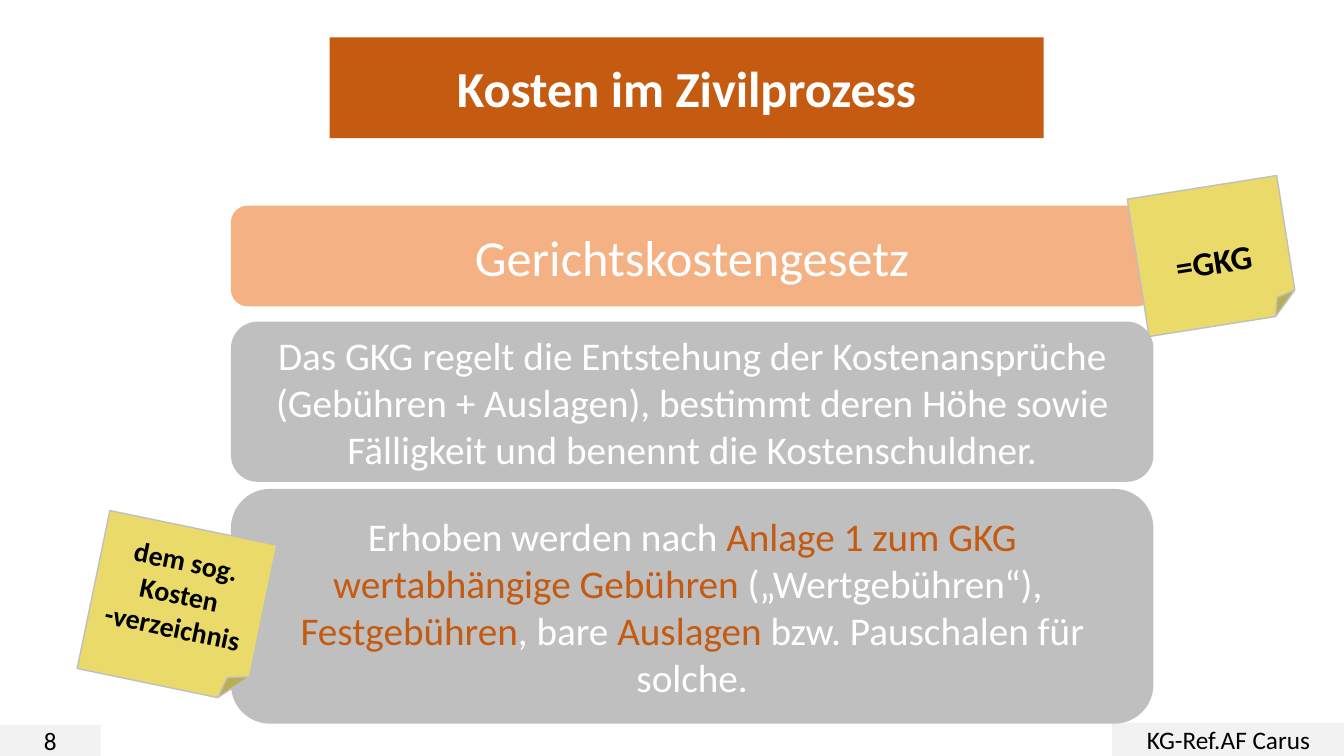
from lxml import etree
from pptx import Presentation
from pptx.dml.color import RGBColor
from pptx.enum.shapes import MSO_SHAPE
from pptx.enum.text import MSO_ANCHOR, MSO_AUTO_SIZE, PP_ALIGN
from pptx.oxml.ns import qn
from pptx.util import Inches, Pt

ROUNDED = MSO_SHAPE.ROUNDED_RECTANGLE
RECTANGLE = MSO_SHAPE.RECTANGLE
NOTE = MSO_SHAPE.FOLDED_CORNER
CENTER = PP_ALIGN.CENTER
MIDDLE = MSO_ANCHOR.MIDDLE
NO_AUTOFIT = MSO_AUTO_SIZE.NONE
TITLE_ONLY = 5

FONT = "Calibri"
COLORS = {
    "rust": "C55A11",
    "peach": "F4B183",
    "gray": "BFBFBF",
    "light": "F2F2F2",
    "yellow": "E9DA69",
    "white": "FFFFFF",
    "black": "000000",
}
PANEL_LEFT, PANEL_WIDTH = 2.29, 9.15


def color(name):
    return RGBColor.from_string(COLORS[name])


def write_text(shape, paragraphs, size, bold=False):
    """Each paragraph is a list of (text, color name) pairs."""
    frame = shape.text_frame
    frame.word_wrap = True
    frame.auto_size = NO_AUTOFIT
    frame.vertical_anchor = MIDDLE
    for index, runs in enumerate(paragraphs):
        paragraph = frame.add_paragraph() if index else frame.paragraphs[0]
        paragraph.alignment = CENTER
        for text, color_name in runs:
            run = paragraph.add_run()
            run.text = text
            run.font.name = FONT
            run.font.size = Pt(size)
            run.font.bold = bold
            run.font.color.rgb = color(color_name)


def fill_shape(shape, fill):
    shape.fill.solid()
    shape.fill.fore_color.rgb = color(fill)


def add_title(slide, box, text):
    title = slide.shapes.title
    title.left, title.top, title.width, title.height = map(Inches, box)
    # Rounded outline for the title placeholder
    geometry = etree.SubElement(title.element.spPr, qn("a:prstGeom"), prst="roundRect")
    etree.SubElement(geometry, qn("a:avLst"))
    fill_shape(title, "rust")
    write_text(title, [[(text, "white")]], 36, bold=True)


def add_box(slide, kind, box, fill, paragraphs, size, bold=False):
    shape = slide.shapes.add_shape(kind, *map(Inches, box))
    shape.shadow.inherit = False
    fill_shape(shape, fill)
    shape.line.fill.background()
    write_text(shape, paragraphs, size, bold)
    return shape


def add_panel(slide, top, height, fill, paragraphs, size):
    box = (PANEL_LEFT, top, PANEL_WIDTH, height)
    panel = add_box(slide, ROUNDED, box, fill, paragraphs, size)
    panel.text_frame.margin_top = panel.text_frame.margin_bottom = 0


def add_note(slide, box, rotation, lines, size, margin_top=0.05):
    paragraphs = [[(line, "black")] for line in lines]
    note = add_box(slide, NOTE, box, "yellow", paragraphs, size, bold=True)
    note.rotation = rotation
    note.line.color.rgb = color("gray")
    note.line.width = Pt(1)
    note.text_frame.margin_top = Inches(margin_top)


def add_footer(slide, box, text):
    add_box(slide, RECTANGLE, box, "light", [[(text, "black")]], 18)


def main():
    presentation = Presentation()
    presentation.slide_width = Inches(13.33)
    presentation.slide_height = Inches(7.5)
    slide = presentation.slides.add_slide(presentation.slide_layouts[TITLE_ONLY])

    add_title(slide, (3.27, 0.37, 7.08, 1), "Kosten im Zivilprozess")

    # Purpose of the law
    add_panel(slide, 3.19, 1.59, "gray", [[(
        "Das GKG regelt die Entstehung der Kostenansprüche (Gebühren + Auslagen), "
        "bestimmt deren Höhe sowie Fälligkeit und benennt die Kostenschuldner.",
        "white")]], 28)
    add_panel(slide, 2.04, 1, "peach", [[("Gerichtskostengesetz", "white")]], 36)

    # Footer
    add_footer(slide, (11.03, 7.17, 2.31, 0.33), "KG-Ref.AF Carus")
    add_footer(slide, (0, 7.19, 1, 0.31), "8")

    # Kinds of fees, with sticky notes
    add_note(slide, (11.28, 1.85, 1.5, 1.38), 351, ["=GKG"], 24, margin_top=0.38)
    add_panel(slide, 4.85, 2.33, "gray", [
        [("Erhoben werden nach ", "white"),
         ("Anlage 1 zum GKG wertabhängige Gebühren ", "rust"),
         ("(„Wertgebühren“), ", "white")],
        [("Festgebühren", "rust"), (", bare ", "white"), ("Auslagen", "rust"),
         (" bzw. Pauschalen für solche.", "white")],
    ], 28)
    add_note(slide, (0.91, 5.22, 1.69, 1.6), 11.7,
             ["dem sog. Kosten", "-verzeichnis"], 20)

    presentation.save("out.pptx")


if __name__ == "__main__":
    main()
